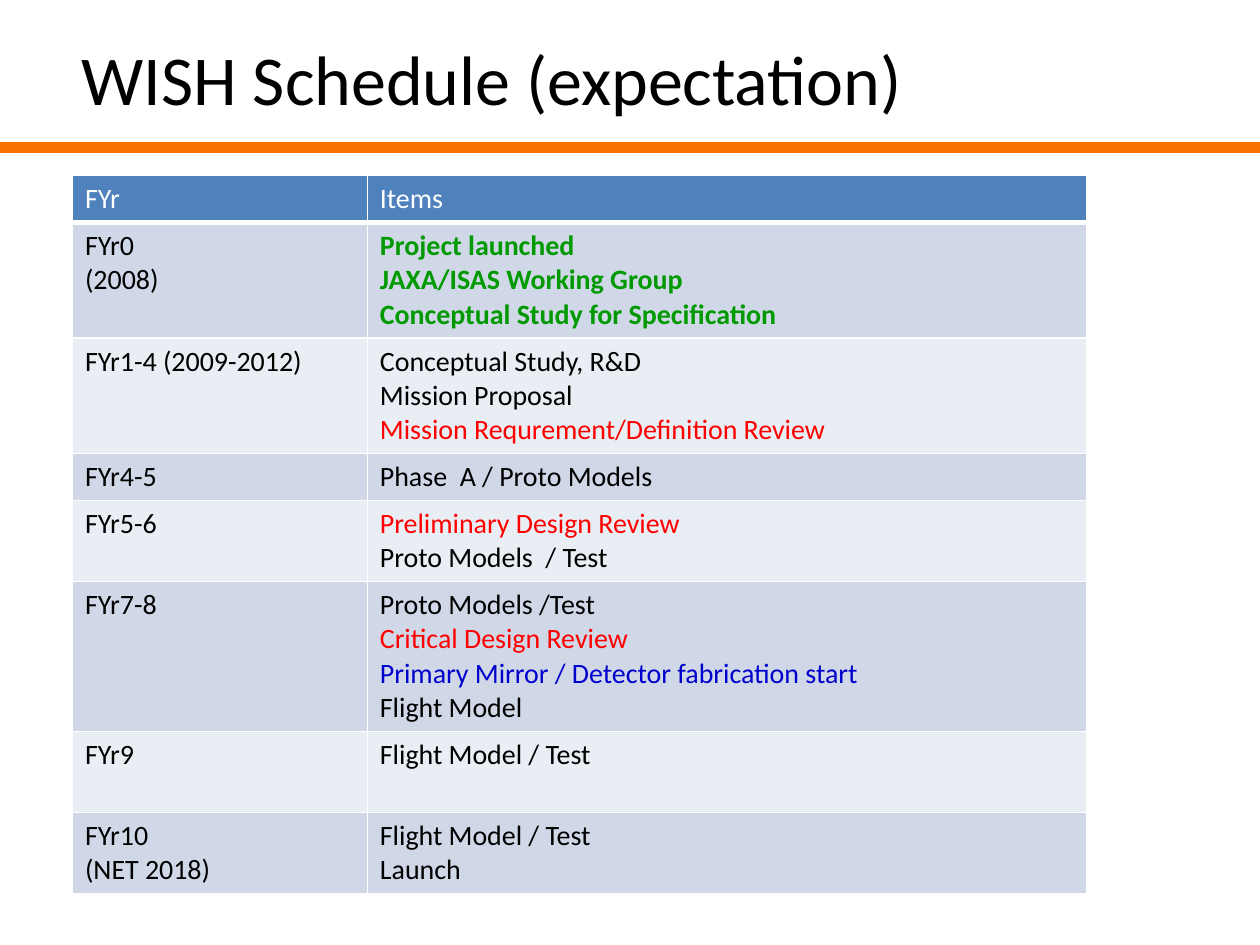
from dataclasses import dataclass

from pptx import Presentation
from pptx.dml.color import RGBColor as Rgb
from pptx.enum.shapes import MSO_CONNECTOR as Connector
from pptx.enum.text import MSO_AUTO_SIZE as AutoSize
from pptx.oxml import parse_xml
from pptx.oxml.ns import nsdecls, qn
from pptx.util import Pt


@dataclass(frozen=True)
class Theme:
    font: str = "Calibri"
    title_size: float = 40
    table_size: float = 16
    text: str = "000000"
    header_text: str = "FFFFFF"
    done: str = "009900"
    review: str = "FF0000"
    fabrication: str = "0000CC"
    rule: str = "F97101"
    header_fill: str = "4F81BD"
    bands: tuple = ("D0D8E8", "E9EDF4")
    border: str = "FFFFFF"


THEME = Theme()
COLUMN_WIDTHS = (168.5, 411.1)
LINE_HEIGHT, CELL_PADDING = 19.6, 7.2

# Each row: lines of the year, lines of the items, height in text lines.
# An item is plain text or (text, colour).
SCHEDULE = [
    (["FYr0", "(2008)"],
     [("Project launched", THEME.done),
      ("JAXA/ISAS Working Group", THEME.done),
      ("Conceptual Study for Specification", THEME.done)], 3),
    (["FYr1-4 (2009-2012)"],
     ["Conceptual Study, R&D", "Mission Proposal",
      ("Mission Requrement/Definition Review", THEME.review)], 3),
    (["FYr4-5"], ["Phase  A / Proto Models"], 1),
    (["FYr5-6"],
     [("Preliminary Design Review", THEME.review), "Proto Models  / Test"], 2),
    (["FYr7-8"],
     ["Proto Models /Test", ("Critical Design Review", THEME.review),
      ("Primary Mirror / Detector fabrication start", THEME.fabrication),
      "Flight Model"], 4),
    (["FYr9"], ["Flight Model / Test"], 2),
    (["FYr10", "(NET 2018)"], ["Flight Model / Test", "Launch"], 2),
]


def style_paragraph(paragraph, text, size, color, bold=False):
    paragraph.text = text
    font = paragraph.font
    font.name, font.size, font.bold = THEME.font, Pt(size), bold
    font.color.rgb = Rgb.from_string(color)


def add_title(slide, text):
    title = slide.shapes.add_textbox(Pt(39.6), Pt(16.6), Pt(488), Pt(55.4))
    frame = title.text_frame
    frame.word_wrap = False
    frame.auto_size = AutoSize.SHAPE_TO_FIT_TEXT
    style_paragraph(frame.paragraphs[0], text, THEME.title_size, THEME.text)


def add_rule(slide, y, width):
    rule = slide.shapes.add_connector(Connector.STRAIGHT, 0, Pt(y), width, Pt(y))
    rule.line.color.rgb = Rgb.from_string(THEME.rule)
    rule.line.width = Pt(6)
    rule._element.spPr.append(parse_xml(f"<a:effectLst {nsdecls('a')}/>"))


def set_borders(cell, bottom):
    properties = cell._tc.get_or_add_tcPr()
    for side, width in (("L", 1), ("R", 1), ("T", 1), ("B", bottom)):
        properties.append(parse_xml(
            f'<a:ln{side} {nsdecls("a")} w="{Pt(width)}"><a:solidFill>'
            f'<a:srgbClr val="{THEME.border}"/></a:solidFill></a:ln{side}>'))


def fill_cell(cell, lines, fill, color, bottom=1):
    set_borders(cell, bottom)
    cell.fill.solid()
    cell.fill.fore_color.rgb = Rgb.from_string(fill)
    frame = cell.text_frame
    for index, line in enumerate(lines):
        text, shade = (line, color) if isinstance(line, str) else line
        paragraph = frame.add_paragraph() if index else frame.paragraphs[0]
        style_paragraph(paragraph, text, THEME.table_size, shade,
                        bold=shade == THEME.done)


def add_schedule(slide):
    heights = [CELL_PADDING + LINE_HEIGHT * count
               for count in (1, *(row[2] for row in SCHEDULE))]
    schedule = slide.shapes.add_table(
        len(heights), len(COLUMN_WIDTHS), Pt(41.4), Pt(100.4),
        Pt(sum(COLUMN_WIDTHS)), Pt(sum(heights))).table
    for column, width in zip(schedule.columns, COLUMN_WIDTHS):
        column.width = Pt(width)
    for row, height in zip(schedule.rows, heights):
        row.height = Pt(height)

    # Header row
    for column, heading in enumerate(("FYr", "Items")):
        fill_cell(schedule.cell(0, column), [heading], THEME.header_fill,
                  THEME.header_text, bottom=3)

    # Banded schedule rows
    for number, (years, items, _) in enumerate(SCHEDULE, start=1):
        band = THEME.bands[(number - 1) % 2]
        for column, lines in enumerate((years, items)):
            fill_cell(schedule.cell(number, column), lines, band, THEME.text)


def main():
    deck = Presentation()
    deck.slide_width, deck.slide_height = Pt(720), Pt(540)
    slide = deck.slides.add_slide(deck.slide_layouts[6])
    add_title(slide, "WISH Schedule (expectation)")
    add_rule(slide, 84.2, deck.slide_width)
    add_schedule(slide)
    deck.save("out.pptx")


if __name__ == "__main__":
    main()
